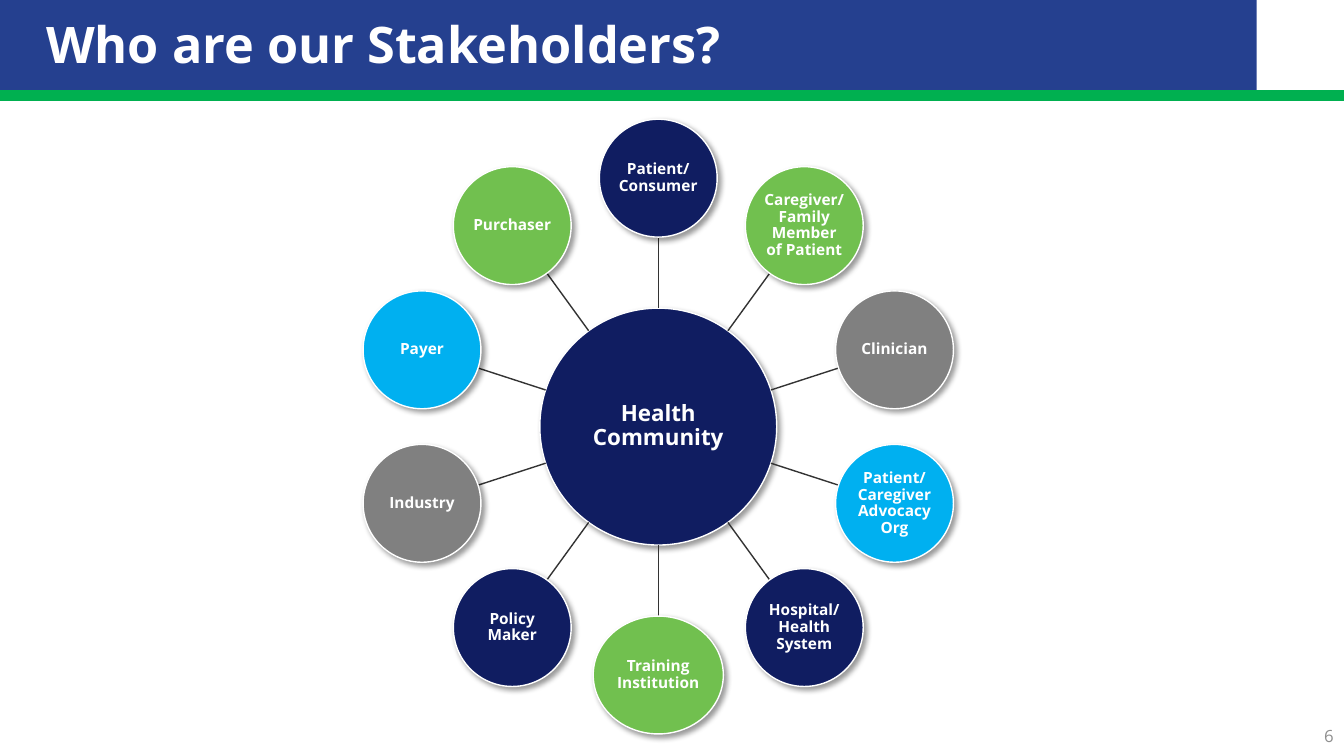
from dataclasses import dataclass
from math import cos, radians, sin

from lxml import etree
from pptx import Presentation
from pptx.dml.color import RGBColor
from pptx.enum.shapes import MSO_CONNECTOR, MSO_SHAPE
from pptx.enum.text import MSO_ANCHOR, MSO_AUTO_SIZE, PP_ALIGN
from pptx.oxml import parse_xml
from pptx.oxml.ns import nsdecls, qn
from pptx.util import Cm, Pt

RECT, OVAL = MSO_SHAPE.RECTANGLE, MSO_SHAPE.OVAL
STRAIGHT = MSO_CONNECTOR.STRAIGHT
MIDDLE = MSO_ANCHOR.MIDDLE
NO_FIT = MSO_AUTO_SIZE.NONE
LEFT, CENTER, RIGHT = PP_ALIGN.LEFT, PP_ALIGN.CENTER, PP_ALIGN.RIGHT
TITLE_ONLY = 5


@dataclass(frozen=True)
class Theme:
    font: str = "Open Sans"
    band: str = "25408F"
    rule: str = "00B050"
    navy: str = "101D61"
    green: str = "71C04F"
    gray: str = "808080"
    cyan: str = "00B0F0"
    white: str = "FFFFFF"
    spoke: str = "333333"
    number: str = "8F8F8F"
    title_size: int = 36
    hub_size: int = 16
    number_size: int = 12
    node_size: int = 11


def write(sp, text, size, color, bold=True, align=CENTER, spacing=0.9,
          insets=(0.03, 0.03, 0.03, 0.03), font=Theme.font):
    """Fill a shape with one formatted paragraph; insets are in cm."""
    tf = sp.text_frame
    tf.word_wrap = True
    tf.auto_size = NO_FIT
    tf.vertical_anchor = MIDDLE
    tf.margin_left, tf.margin_top, tf.margin_right, tf.margin_bottom = map(Cm, insets)
    p = tf.paragraphs[0]
    p.text = text
    p.alignment = align
    p.line_spacing = spacing
    p.space_before = Pt(0)
    for r in p.runs:
        r.font.name = font
        r.font.size = Pt(size)
        r.font.bold = bold
        r.font.color.rgb = RGBColor.from_string(color)


class SlideBuilder:
    def __init__(self, s, theme):
        self.s = s
        self.theme = theme

    def title(self, text, x, y, w, h):
        sp = self.s.shapes.title
        sp.left, sp.top, sp.width, sp.height = Cm(x), Cm(y), Cm(w), Cm(h)
        write(sp, text, self.theme.title_size, self.theme.white, align=LEFT,
              insets=(0.25, 0.13, 0.25, 0))
        # Bring the title in front of the band
        self.s.shapes.element.append(sp.element)

    def band(self, x, y, w, h, color):
        sp = self.s.shapes.add_shape(RECT, Cm(x), Cm(y), Cm(w), Cm(h))
        sp.shadow.inherit = False
        sp.fill.solid()
        sp.fill.fore_color.rgb = RGBColor.from_string(color)
        sp.line.fill.background()

    def line(self, x1, y1, x2, y2, color, width):
        cxn = self.s.shapes.add_connector(STRAIGHT, Cm(x1), Cm(y1), Cm(x2), Cm(y2))
        cxn.line.color.rgb = RGBColor.from_string(color)
        cxn.line.width = Pt(width)
        etree.SubElement(cxn.element.spPr, qn("a:effectLst"))

    def circle(self, text, cx, cy, w, h, color, size):
        sp = self.s.shapes.add_shape(OVAL, Cm(cx - w / 2), Cm(cy - h / 2), Cm(w), Cm(h))
        sp.fill.solid()
        sp.fill.fore_color.rgb = RGBColor.from_string(color)
        sp.line.color.rgb = RGBColor.from_string(self.theme.white)
        sp.line.width = Pt(1)
        # Soft shadow to the lower right
        sp.element.spPr.append(parse_xml(
            f'<a:effectLst {nsdecls("a")}>'
            f'<a:outerShdw blurRad="{Pt(4)}" dist="{Pt(3)}" dir="2700000" algn="tl" rotWithShape="0">'
            '<a:srgbClr val="000000"><a:alpha val="40000"/></a:srgbClr>'
            '</a:outerShdw></a:effectLst>'))
        write(sp, text, size, self.theme.white)

    def slide_number(self, text, x, y, w, h):
        sp = self.s.shapes.add_textbox(Cm(x), Cm(y), Cm(w), Cm(h))
        write(sp, text, self.theme.number_size, self.theme.number, bold=False,
              align=RIGHT, spacing=1.0, insets=(0.25, 0.13, 0.25, 0.13))


def main():
    theme = Theme()
    prs = Presentation()
    prs.slide_width, prs.slide_height = Cm(33.87), Cm(19.05)
    s = prs.slides.add_slide(prs.slide_layouts[TITLE_ONLY])
    slide = SlideBuilder(s, theme)

    # Header
    slide.band(-0.08, -0.03, 31.75, 2.31, theme.band)
    slide.line(-0.08, 2.41, 33.99, 2.41, theme.rule, 8)
    slide.title("Who are our Stakeholders?", 0.91, -0.03, 27, 2.31)
    slide.slide_number("6", 26.24, 18.03, 7.62, 1.02)

    # Hub
    hub_x, hub_y, hub_d = 16.59, 10.75, 5.97
    slide.circle("Health Community", hub_x, hub_y, hub_d, hub_d, theme.navy, theme.hub_size)

    # Stakeholders, clockwise from the top: label, colour, width
    orbit, node_d = 6.26, 2.97
    stakeholders = [
        ("Patient/ Consumer", theme.navy, node_d),
        ("Caregiver/\nFamily Member of Patient", theme.green, node_d),
        ("Clinician", theme.gray, node_d),
        ("Patient/ Caregiver Advocacy Org", theme.cyan, node_d),
        ("Hospital/ Health System", theme.navy, node_d),
        ("Training Institution", theme.green, 3.28),
        ("Policy Maker", theme.navy, node_d),
        ("Industry", theme.gray, node_d),
        ("Payer", theme.cyan, node_d),
        ("Purchaser", theme.green, node_d),
    ]
    spoke_start, spoke_end = hub_d / 2, orbit - node_d / 2
    for i, (label, color, width) in enumerate(stakeholders):
        angle = radians(360 / len(stakeholders) * i - 90)
        dx, dy = cos(angle), sin(angle)
        slide.line(hub_x + spoke_start * dx, hub_y + spoke_start * dy,
                   hub_x + spoke_end * dx, hub_y + spoke_end * dy, theme.spoke, 1)
        slide.circle(label, hub_x + orbit * dx, hub_y + orbit * dy,
                     width, node_d, color, theme.node_size)

    prs.save("out.pptx")


if __name__ == "__main__":
    main()
